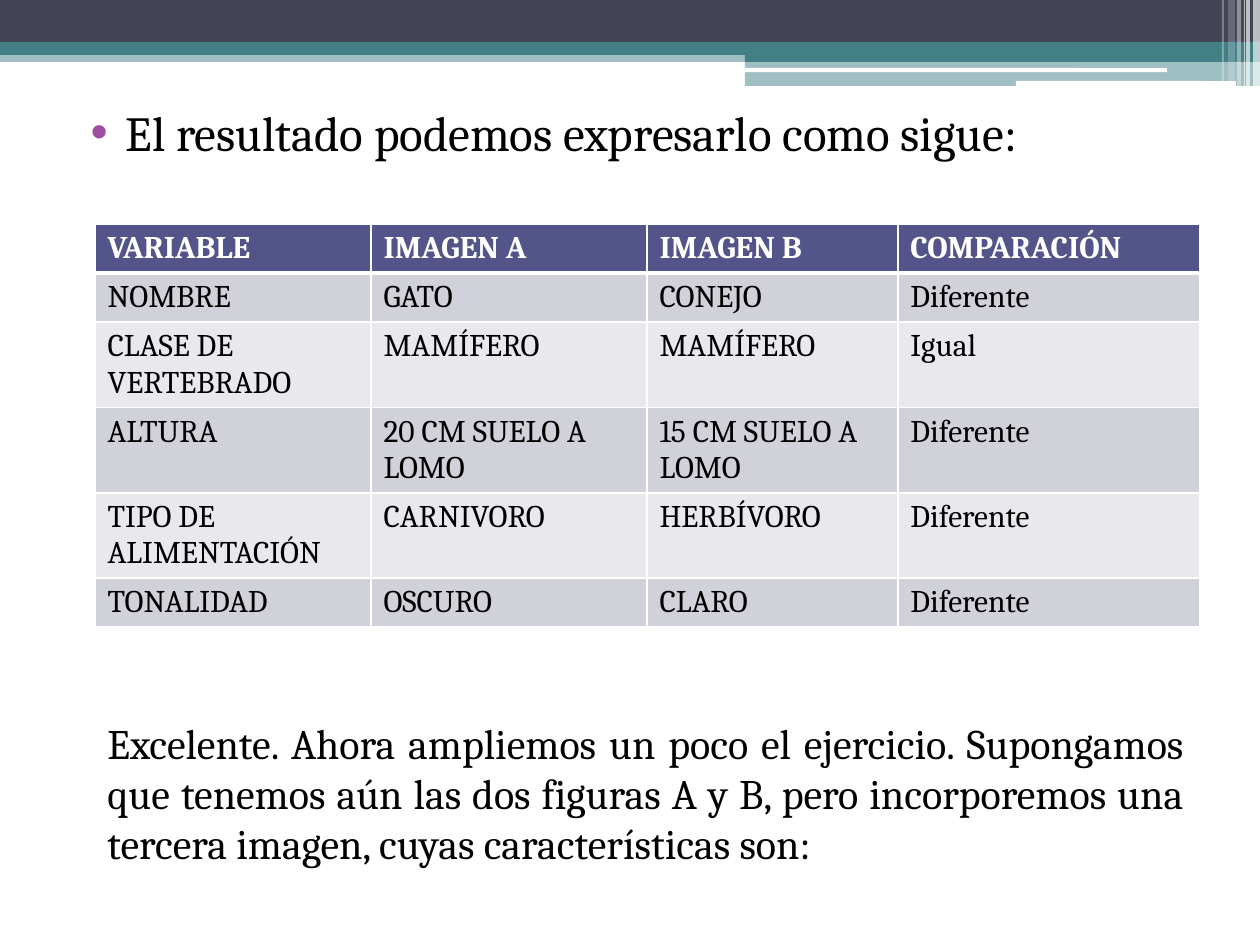
from dataclasses import dataclass

from lxml import etree
from pptx import Presentation
from pptx import util as u
from pptx.dml.color import RGBColor
from pptx.enum import shapes, text
from pptx.oxml.ns import qn

PX_PER_INCH = 126
FONT = "Cambria"
WHITE, BLACK, TEAL, SLATE = "FFFFFF", "000000", "438086", "424456"
HEADER, BAND_DARK, BAND_LIGHT, BULLET = "53548A", "D1D1DA", "E9E9ED", "A04DA3"


@dataclass
class Bar:
    x: int
    y: int
    w: int
    h: int
    color: str
    alpha: int = 100
    rounded: bool = False


BARS = [
    # full-width bands
    Bar(0, 50, 1260, 12, TEAL, 50),
    Bar(0, 0, 1260, 42, SLATE),
    Bar(0, 42, 1260, 13, TEAL),
    # right-hand step
    Bar(745, 49, 515, 13, TEAL),
    Bar(745, 61, 515, 25, TEAL, 50),
    Bar(745, 68, 422, 4, WHITE, rounded=True),
    Bar(1016, 81, 220, 5, WHITE, rounded=True),
    # translucent stripes in the corner
    Bar(1253, 0, 7, 86, WHITE, 65),
    Bar(1246, 0, 4, 86, WHITE, 65),
    Bar(1244, 0, 1, 86, WHITE, 60),
    Bar(1237, 0, 4, 86, WHITE, 40),
    Bar(1228, 0, 7, 81, WHITE, 20),
    Bar(1222, 0, 2, 81, WHITE, 30),
]

COLUMNS = [276, 276, 251, 302]
LINE, TWO_LINES = 49, 85
ROW_HEIGHTS = [LINE, LINE, TWO_LINES, TWO_LINES, TWO_LINES, LINE]
ROWS = [
    ["VARIABLE", "IMAGEN A", "IMAGEN B", "COMPARACIÓN"],
    ["NOMBRE", "GATO", "CONEJO", "Diferente"],
    ["CLASE DE VERTEBRADO", "MAMÍFERO", "MAMÍFERO", "Igual"],
    ["ALTURA", "20 CM SUELO A LOMO", "15 CM SUELO A LOMO", "Diferente"],
    ["TIPO DE ALIMENTACIÓN", "CARNIVORO", "HERBÍVORO", "Diferente"],
    ["TONALIDAD", "OSCURO", "CLARO", "Diferente"],
]


def px(n: int) -> int:
    return round(n * u.Inches(1) / PX_PER_INCH)


def rgb(color: str) -> RGBColor:
    return RGBColor.from_string(color)


def fill(target, color: str, alpha: int = 100) -> None:
    target.fill.solid()
    target.fill.fore_color.rgb = rgb(color)
    if alpha < 100:
        clr = target.fill._xPr.find(qn("a:solidFill"))[0]
        etree.SubElement(clr, qn("a:alpha"), val=str(alpha * 1000))


def write(p, words: str, size: int, color: str = BLACK, bold: bool = False) -> None:
    r = p.add_run()
    r.text = words
    for name, value in {"name": FONT, "size": u.Pt(size), "bold": bold}.items():
        setattr(r.font, name, value)
    r.font.color.rgb = rgb(color)


def draw_bar(s, bar: Bar) -> None:
    kind = shapes.MSO_SHAPE.ROUNDED_RECTANGLE if bar.rounded else shapes.MSO_SHAPE.RECTANGLE
    sp = s.shapes.add_shape(kind, *map(px, (bar.x, bar.y, bar.w, bar.h)))
    sp.shadow.inherit = False
    sp.line.fill.background()
    fill(sp, bar.color, bar.alpha)


def set_border(cell, side: str, points: int) -> None:
    ln = etree.SubElement(cell._tc.get_or_add_tcPr(), qn(f"a:ln{side}"), w=str(u.Pt(points)))
    solid = etree.SubElement(ln, qn("a:solidFill"))
    etree.SubElement(solid, qn("a:srgbClr"), val=WHITE)


def draw_table(s, x: int, y: int) -> None:
    size = px(sum(COLUMNS)), px(sum(ROW_HEIGHTS))
    table = s.shapes.add_table(len(ROWS), len(COLUMNS), px(x), px(y), *size).table
    for column, width in zip(table.columns, COLUMNS):
        column.width = px(width)
    for i, (row, height) in enumerate(zip(table.rows, ROW_HEIGHTS)):
        row.height = px(height)
        header = i == 0
        back = HEADER if header else BAND_DARK if i % 2 else BAND_LIGHT
        widths = {"L": 1, "R": 1, "T": 3 if i == 1 else 1, "B": 3 if header else 1}
        for cell, words in zip(row.cells, ROWS[i]):
            for side, points in widths.items():
                set_border(cell, side, points)
            fill(cell, back)
            write(cell.text_frame.paragraphs[0], words, 18, WHITE if header else BLACK, header)


def fill_body(sp) -> None:
    for name, value in zip(("left", "top", "width", "height"), (63, 96, 1134, 810)):
        setattr(sp, name, px(value))
    tf = sp.text_frame
    tf.auto_size = text.MSO_AUTO_SIZE.NONE
    p = tf.paragraphs[0]
    p.space_before = u.Pt(3)
    pPr = p._p.get_or_add_pPr()
    pPr.set("marL", str(px(50)))
    pPr.set("indent", str(px(-35)))
    color = etree.SubElement(pPr, qn("a:buClr"))
    etree.SubElement(color, qn("a:srgbClr"), val=BULLET)
    etree.SubElement(pPr, qn("a:buChar"), char="•")
    write(p, "El resultado podemos expresarlo como sigue:", 28)


def draw_closing(s) -> None:
    tf = s.shapes.add_textbox(*map(px, (95, 711, 1101, 217))).text_frame
    tf.word_wrap = True
    p = tf.paragraphs[0]
    p.alignment = text.PP_ALIGN.JUSTIFY
    write(p, "Excelente. Ahora ampliemos un poco el ejercicio. Supongamos que tenemos "
             "aún las dos figuras A y B, pero incorporemos una tercera imagen, cuyas "
             "características son:", 24)


def main() -> None:
    prs = Presentation()
    prs.slide_width, prs.slide_height = px(1260), px(945)
    s = prs.slides.add_slide(prs.slide_layouts.get_by_name("Title and Content"))
    # the slide has body text but no title
    title = s.shapes.title
    title.element.getparent().remove(title.element)

    for bar in BARS:
        draw_bar(s, bar)
    fill_body(s.placeholders[1])
    draw_table(s, 95, 224)
    draw_closing(s)
    prs.save("out.pptx")


if __name__ == "__main__":
    main()
